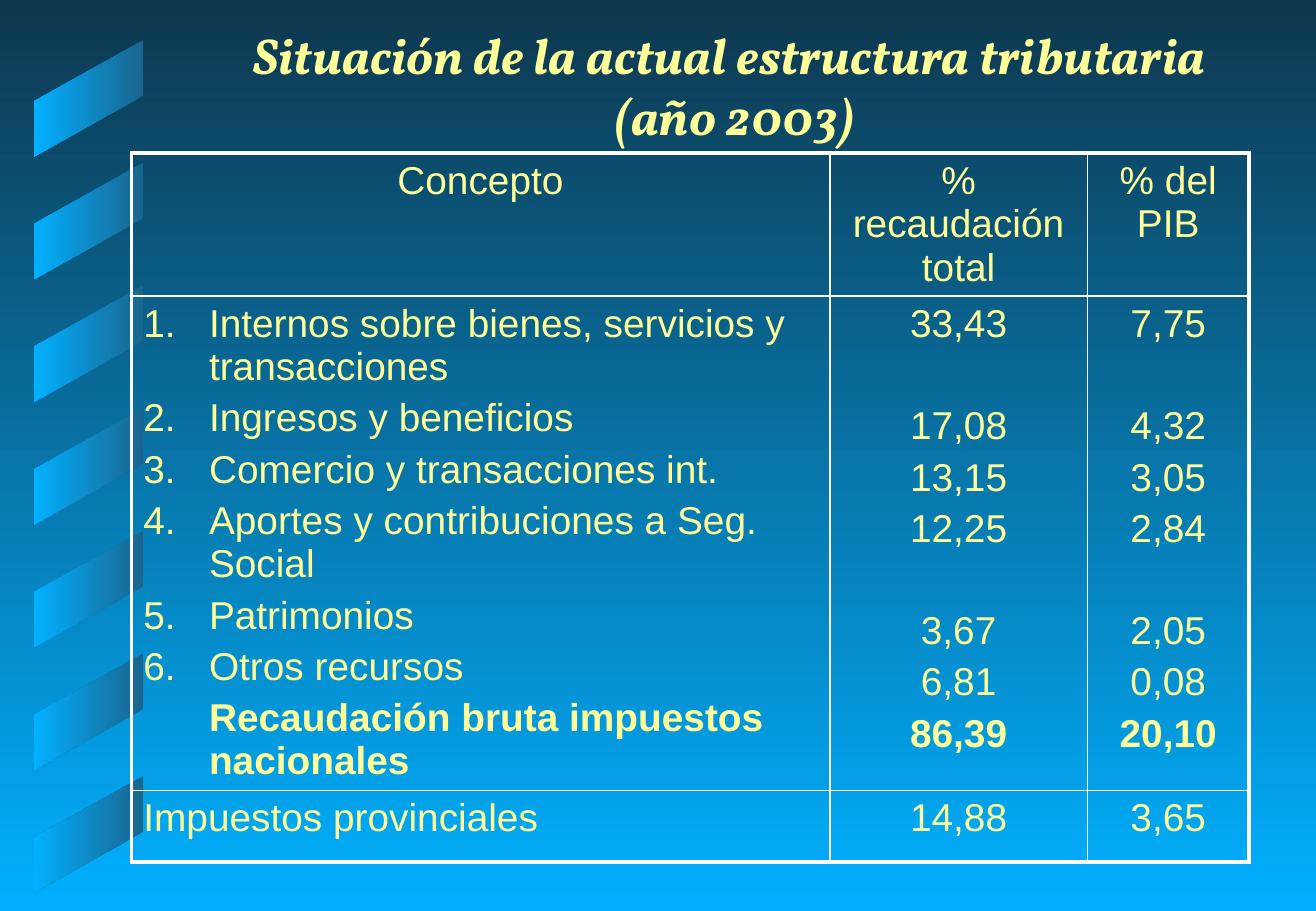
from pptx import Presentation
from pptx.dml.color import RGBColor
from pptx.enum.shapes import MSO_SHAPE as Shape
from pptx.enum.text import MSO_ANCHOR as Anchor, MSO_AUTO_SIZE as AutoSize, PP_ALIGN as Align
from pptx.oxml import parse_xml
from pptx.oxml.ns import nsdecls, qn
from pptx.util import Inches, Pt

NIGHT = RGBColor(0x0E, 0x37, 0x4E)
STEEL = RGBColor(0x1A, 0x65, 0x8E)
SKY = RGBColor(0x01, 0xB0, 0xFF)
CREAM = RGBColor(0xFF, 0xFF, 0x99)
WHITE = RGBColor(0xFF, 0xFF, 0xFF)

COLUMN_WIDTHS = [5.75, 2.12, 1.33]
ROW_HEIGHTS = [1.17, 4.07, 0.59]
THICK, THIN = Pt(2.25), Pt(1)
SPACE = Pt(4.5)
SPACE_AFTER_WRAP = Pt(35)  # clears the second line of the concept above
HANGING = Inches(0.54)

HEADERS = ["Concepto", "% recaudación total", "% del PIB"]
TAXES = [
    ("1.\tInternos sobre bienes, servicios y transacciones", "33,43", "7,75"),
    ("2.\tIngresos y beneficios", "17,08", "4,32"),
    ("3.\tComercio y transacciones int.", "13,15", "3,05"),
    ("4.\tAportes y contribuciones a Seg. Social", "12,25", "2,84"),
    ("5.\tPatrimonios", "3,67", "2,05"),
    ("6.\tOtros recursos", "6,81", "0,08"),
    ("Recaudación bruta impuestos nacionales", "86,39", "20,10"),
]
WRAPPED_TAXES = {0, 3}
TOTAL = len(TAXES) - 1
PROVINCIAL = ["Impuestos provinciales", "14,88", "3,65"]


def fill_gradient(fill, first, last, angle):
    fill.gradient()
    fill.gradient_angle = angle
    for stop, color in zip(fill.gradient_stops, (first, last)):
        stop.color.rgb = color


def format_font(font, name, size, bold=False, italic=False):
    font.name, font.size = name, Pt(size)
    font.bold, font.italic = bold, italic
    font.color.rgb = CREAM


def add_stripe(slide, top):
    stripe = slide.shapes.add_shape(
        Shape.PARALLELOGRAM, Inches(0.25), Inches(top), Inches(0.96), Inches(0.9))
    stripe.adjustments[0] = 0.56
    stripe.rotation = 90
    stripe._element.spPr.find(qn("a:xfrm")).set("flipH", "1")
    stripe.shadow.inherit = False
    stripe.line.fill.background()
    fill_gradient(stripe.fill, STEEL, SKY, 0)
    stripe._element.spPr.find(qn("a:gradFill")).set("rotWithShape", "0")


def format_title(title):
    title.left, title.top = Inches(1.44), Inches(0.46)
    title.width, title.height = Inches(9.21), Inches(0.79)
    frame = title.text_frame
    frame.text = "Situación de la actual estructura tributaria \v(año 2003)"
    frame.auto_size = AutoSize.NONE
    frame.vertical_anchor = Anchor.BOTTOM
    paragraph = frame.paragraphs[0]
    paragraph.alignment = Align.CENTER
    for run in paragraph.runs:
        format_font(run.font, "Vollkorn", 30, bold=True, italic=True)


def set_borders(cell, row, column):
    """Thick lines round the table, thin lines between its cells."""
    last_row, last_column = len(ROW_HEIGHTS) - 1, len(COLUMN_WIDTHS) - 1
    outer_sides = [("L", column == 0), ("R", column == last_column),
                   ("T", row == 0), ("B", row == last_row)]
    properties = cell._tc.get_or_add_tcPr()
    for position, (side, outer) in enumerate(outer_sides):
        properties.insert(position, parse_xml(
            f'<a:ln{side} {nsdecls("a")} w="{THICK if outer else THIN}">'
            f'<a:solidFill><a:srgbClr val="{WHITE}"/></a:solidFill></a:ln{side}>'))


def format_tax(paragraph, column, index):
    """Hang the concepts and line the figures up with them."""
    if column == 0:
        properties = paragraph._p.get_or_add_pPr()
        properties.set("marL", str(HANGING))
        properties.set("indent", str(0 if index == TOTAL else -HANGING))
    elif index - 1 in WRAPPED_TAXES:
        paragraph.space_before = SPACE_AFTER_WRAP


def fill_cell(cell, row, column, lines):
    cell.fill.background()
    set_borders(cell, row, column)
    cell.text_frame.text = "\n".join(lines)
    for index, paragraph in enumerate(cell.text_frame.paragraphs):
        centred = row == 0 or column > 0
        paragraph.alignment = Align.CENTER if centred else Align.LEFT
        paragraph.space_before = SPACE
        if row == 1:
            format_tax(paragraph, column, index)
        for run in paragraph.runs:
            format_font(run.font, "Arial", 23, bold=index == TOTAL)


def add_tax_table(slide):
    table = slide.shapes.add_table(
        len(ROW_HEIGHTS), len(COLUMN_WIDTHS), Inches(1.08), Inches(1.26),
        Inches(sum(COLUMN_WIDTHS)), Inches(sum(ROW_HEIGHTS))).table
    table.first_row = table.horz_banding = False
    for column, width in zip(table.columns, COLUMN_WIDTHS):
        column.width = Inches(width)
    for row, height in zip(table.rows, ROW_HEIGHTS):
        row.height = Inches(height)
    for column in range(len(COLUMN_WIDTHS)):
        taxes = [tax[column] for tax in TAXES]
        for row, lines in enumerate(([HEADERS[column]], taxes, [PROVINCIAL[column]])):
            fill_cell(table.cell(row, column), row, column, lines)


def main():
    presentation = Presentation()
    presentation.slide_width, presentation.slide_height = Inches(10.83), Inches(7.5)
    slide = presentation.slides.add_slide(presentation.slide_layouts[5])
    fill_gradient(slide.background.fill, NIGHT, SKY, 270)
    for index in range(7):
        add_stripe(slide, 0.36 + 1.01 * index)
    format_title(slide.shapes.title)
    add_tax_table(slide)
    presentation.save("out.pptx")


if __name__ == "__main__":
    main()
